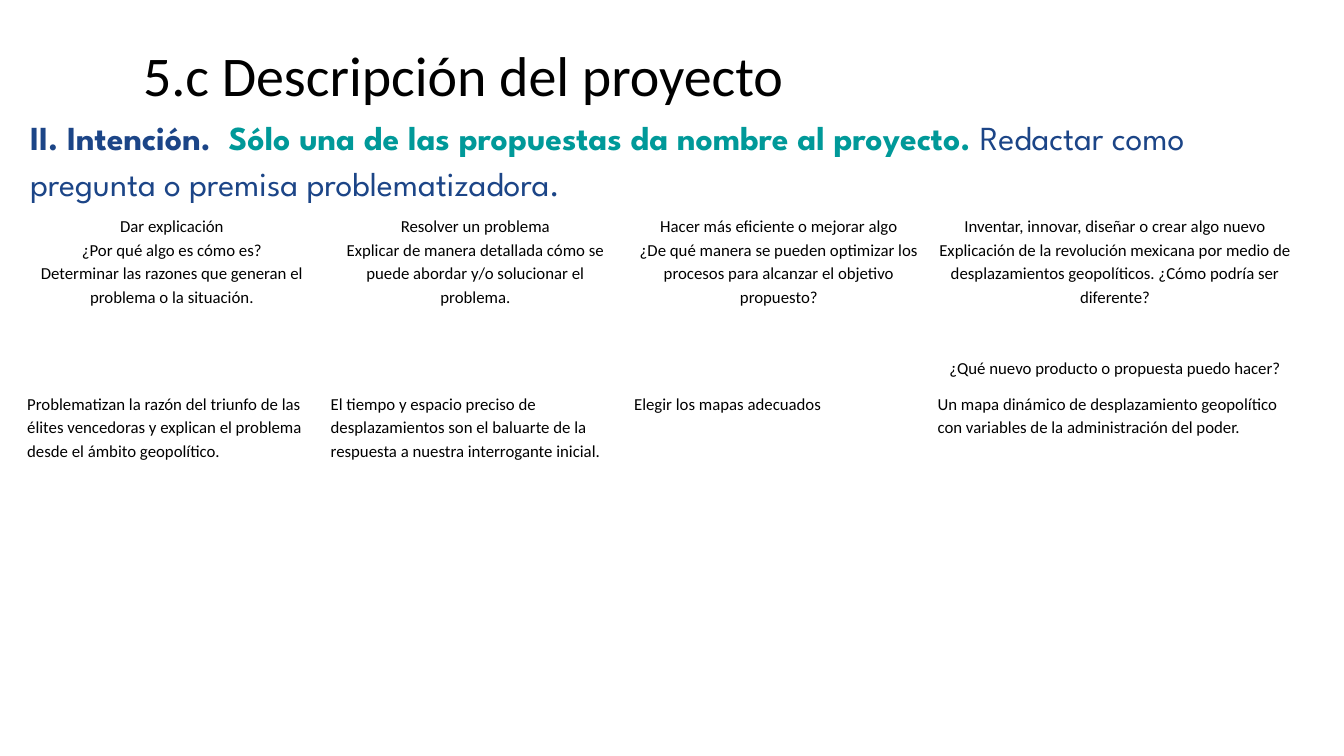
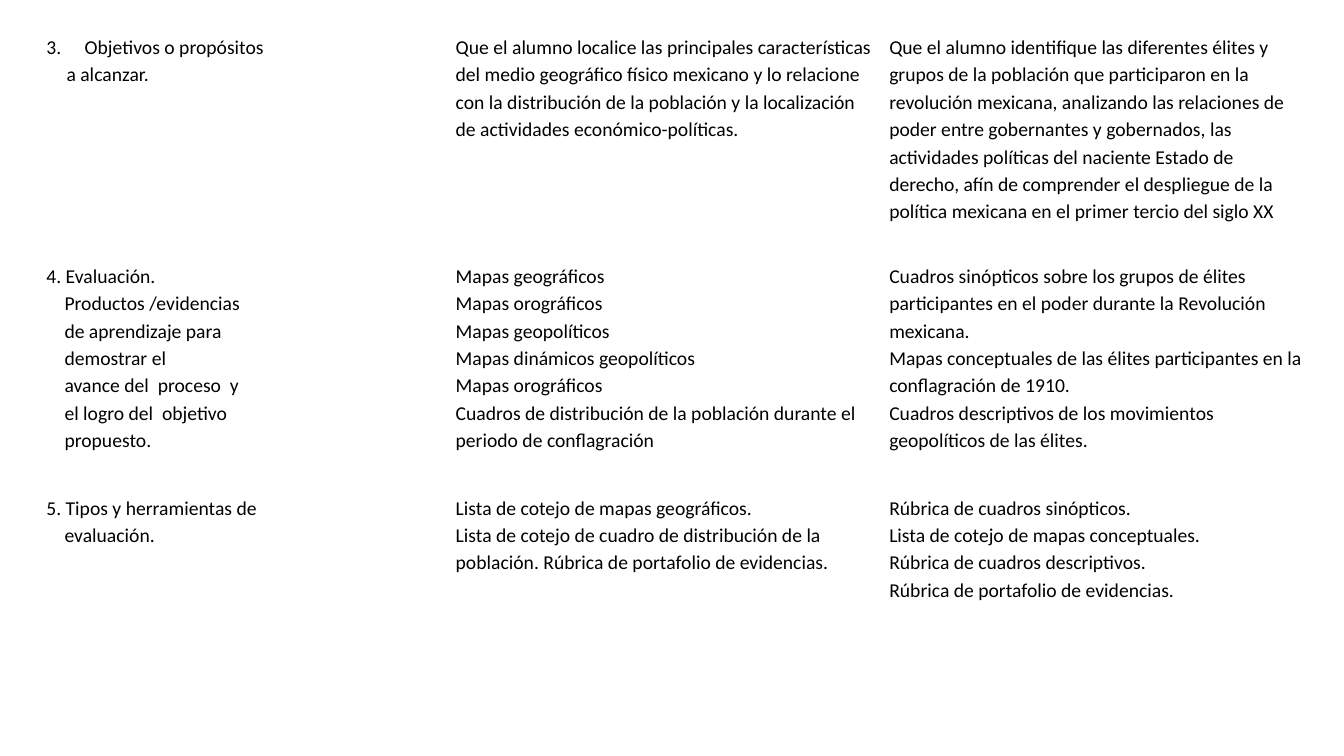
from lxml import etree
from pptx import Presentation
from pptx import util as u
from pptx.dml.color import RGBColor
from pptx.enum import text
from pptx.oxml import ns

BLACK = RGBColor(0, 0, 0)
WHITE = RGBColor(255, 255, 255)
NAVY = RGBColor(0x1C, 0x45, 0x87)
TEAL = RGBColor(0, 0x99, 0x99)
BODY, DISPLAY = "Calibri", "League Spartan"
LINE = 1.15
INSET = 0.07
LEFT, CENTER = text.PP_ALIGN.LEFT, text.PP_ALIGN.CENTER

# Content: a paragraph is a string, or a (string, layout) pair
TITLE = "5.c Descripción del proyecto"
HEADING = [
    ("II. Intención.  ", NAVY, True),
    ("Sólo una de las propuestas da nombre al proyecto. ", TEAL, True),
    ("Redactar como pregunta o premisa problematizadora.", NAVY, False),
]
INTENTIONS = [
    [
        ["Dar explicación", "¿Por qué algo es cómo es?",
         "Determinar las razones que generan el problema o la situación."],
        ["Resolver un problema",
         "Explicar de manera detallada cómo se puede abordar y/o solucionar el problema."],
        ["Hacer más eficiente o mejorar algo",
         "¿De qué manera se pueden optimizar los procesos para alcanzar el objetivo propuesto?"],
        ["Inventar, innovar, diseñar o crear algo nuevo",
         "Explicación de la revolución mexicana por medio de desplazamientos geopolíticos. "
         "¿Cómo podría ser diferente?",
         ("¿Qué nuevo producto o propuesta puedo hacer?", {"before": 34})],
    ],
    [
        ["Problematizan la razón del triunfo de las élites vencedoras y explican el problema "
         "desde el ámbito geopolítico."],
        ["El tiempo y espacio preciso de desplazamientos son el baluarte de la respuesta a "
         "nuestra interrogante inicial."],
        ["Elegir los mapas adecuados"],
        ["Un mapa dinámico de desplazamiento geopolítico con variables de la administración "
         "del poder."],
    ],
]
UNDER = {"indent": 0.18}
OBJECTIVES = [[
    [("Objetivos o propósitos", {"indent": 0.38, "number": 3}),
     ("a alcanzar.", {"indent": 0.2})],
    ["Que el alumno localice las principales características del medio geográfico físico "
     "mexicano y lo relacione con la distribución de la población y la localización de "
     "actividades económico-políticas."],
    ["Que el alumno identifique las diferentes élites y grupos de la población que "
     "participaron en la revolución mexicana, analizando las relaciones de poder entre "
     "gobernantes y gobernados, las actividades políticas del naciente Estado de derecho, "
     "afín de comprender el despliegue de la política mexicana en el primer tercio del "
     "siglo XX"],
]]
EVALUATION = [
    [
        ["4. Evaluación.", ("Productos /evidencias", UNDER), ("de aprendizaje para", UNDER),
         ("demostrar el", UNDER), ("avance del  proceso  y", UNDER),
         ("el logro del  objetivo", UNDER), ("propuesto.", UNDER)],
        ["Mapas geográficos", "Mapas orográficos", "Mapas geopolíticos",
         "Mapas dinámicos geopolíticos", "Mapas orográficos",
         "Cuadros de distribución de la población durante el periodo de conflagración"],
        ["Cuadros sinópticos sobre los grupos de élites participantes en el poder durante la "
         "Revolución mexicana.",
         "Mapas conceptuales de las élites participantes en la conflagración de 1910.",
         "Cuadros descriptivos de los movimientos geopolíticos de las élites."],
    ],
    [
        ["5. Tipos y herramientas de", ("evaluación.", UNDER)],
        ["Lista de cotejo de mapas geográficos.",
         "Lista de cotejo de cuadro de distribución de la población. Rúbrica de portafolio "
         "de evidencias."],
        ["Rúbrica de cuadros sinópticos.", "Lista de cotejo de mapas conceptuales.",
         "Rúbrica de cuadros descriptivos.", "Rúbrica de portafolio de evidencias."],
    ],
]
INTENTION_COLS = [3.01, 3.01, 3.01, 3.66]
PLAN_LEFT, PLAN_COLS = 0.39, [4.06, 4.3, 4.26]


def add_run(p, words, size, font=BODY, color=BLACK, bold=False):
    r = p.add_run()
    r.text = words
    r.font.size, r.font.name, r.font.bold = u.Pt(size), font, bold
    r.font.color.rgb = color


def add_text(s, box, runs, size, font, spacing=None):
    sp = s.shapes.add_textbox(*map(u.Inches, box))
    tf = sp.text_frame
    tf.word_wrap = True
    tf.auto_size = text.MSO_AUTO_SIZE.SHAPE_TO_FIT_TEXT
    p = tf.paragraphs[0]
    p.line_spacing = spacing
    for words, color, bold in runs:
        add_run(p, words, size, font, color, bold)


def style_cell(cell):
    cell.margin_left = cell.margin_right = u.Inches(INSET)
    cell.margin_top = cell.margin_bottom = u.Inches(INSET)
    pr = cell._tc.get_or_add_tcPr()
    for side in ("lnL", "lnR", "lnT", "lnB"):
        ln = etree.SubElement(pr, ns.qn("a:" + side), w=str(u.Pt(1)))
        fill = etree.SubElement(ln, ns.qn("a:solidFill"))
        etree.SubElement(fill, ns.qn("a:srgbClr"), val=str(WHITE))
    cell.fill.solid()
    cell.fill.fore_color.rgb = WHITE


def write_paragraph(p, item, size, align):
    words, layout = item if isinstance(item, tuple) else (item, {})
    p.alignment, p.line_spacing = align, LINE
    if "before" in layout:
        p.space_before = u.Pt(layout["before"])
    add_run(p, words, size)
    if "indent" in layout:
        pr = p._p.get_or_add_pPr()
        indent = u.Inches(layout["indent"])
        pr.set("marL", str(indent))
        if "number" in layout:
            pr.set("indent", str(-indent))
            etree.SubElement(pr, ns.qn("a:buFont"), typeface=BODY)
            etree.SubElement(pr, ns.qn("a:buAutoNum"), type="arabicPeriod",
                             startAt=str(layout["number"]))


def add_grid(s, left, top, cols, heights, rows, size, aligns):
    box = map(u.Inches, (left, top, sum(cols), sum(heights)))
    table = s.shapes.add_table(len(rows), len(cols), *box).table
    table.first_row = table.horz_banding = False
    for column, width in zip(table.columns, cols):
        column.width = u.Inches(width)
    for row, height, cells, align in zip(table.rows, heights, rows, aligns):
        row.height = u.Inches(height)
        for cell, items in zip(row.cells, cells):
            style_cell(cell)
            tf = cell.text_frame
            for i, item in enumerate(items):
                p = tf.add_paragraph() if i else tf.paragraphs[0]
                write_paragraph(p, item, size, align)


def main():
    prs = Presentation()
    prs.slide_width, prs.slide_height = u.Inches(13.33), u.Inches(7.5)
    blank = prs.slide_layouts[6]

    # Project intention
    s = prs.slides.add_slide(blank)
    add_text(s, (0.2, 1.05, 12.7, 0.99), HEADING, 24, DISPLAY, LINE)
    add_grid(s, 0.2, 2.05, INTENTION_COLS, [1.73, 1.27], INTENTIONS, 12, [CENTER, LEFT])
    add_text(s, (1.32, 0.35, 9.78, 0.77), [(TITLE, BLACK, False)], 40, BODY)

    # Objectives and evaluation
    s = prs.slides.add_slide(blank)
    add_grid(s, PLAN_LEFT, 0.25, PLAN_COLS, [2.3], OBJECTIVES, 14, [LEFT])
    add_grid(s, PLAN_LEFT, 2.52, PLAN_COLS, [2.3, 1.49], EVALUATION, 14, [LEFT, LEFT])

    prs.save("out.pptx")


if __name__ == "__main__":
    main()
